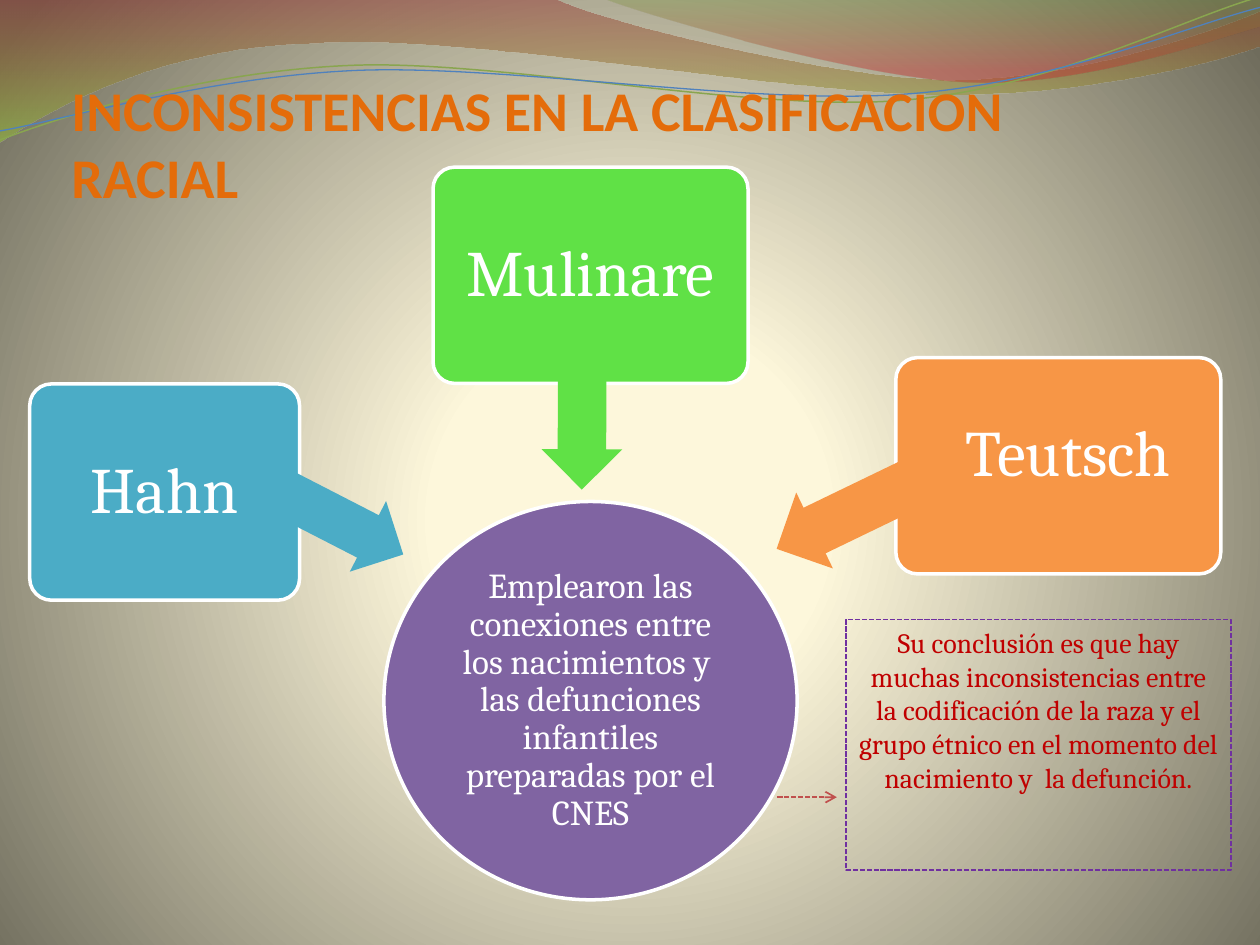
"""Build the slide on inconsistencies in racial classification."""
from dataclasses import dataclass

from lxml import etree
from pptx import Presentation
from pptx.dml.color import RGBColor
from pptx.enum.dml import MSO_LINE
from pptx.enum.shapes import MSO_CONNECTOR, MSO_SHAPE
from pptx.enum.text import MSO_ANCHOR, PP_ALIGN
from pptx.oxml.ns import qn
from pptx.util import Cm, Pt

ROUNDED, OVAL, RECT = MSO_SHAPE.ROUNDED_RECTANGLE, MSO_SHAPE.OVAL, MSO_SHAPE.RECTANGLE
LEFT_ARROW, STRAIGHT, DASH = MSO_SHAPE.LEFT_ARROW, MSO_CONNECTOR.STRAIGHT, MSO_LINE.SQUARE_DOT
TOP, MIDDLE = MSO_ANCHOR.TOP, MSO_ANCHOR.MIDDLE
LEFT, CENTER = PP_ALIGN.LEFT, PP_ALIGN.CENTER


@dataclass(frozen=True)
class Theme:
    heading_font: str = "Calibri"
    body_font: str = "Cambria"
    heading: str = "E46C0A"
    white: str = "FFFFFF"
    orange: str = "F79646"
    green: str = "60E146"
    blue: str = "4BACC6"
    purple: str = "8064A2"
    conclusion: str = "C00000"
    conclusion_border: str = "7030A0"
    pointer: str = "C0504D"
    olive_wave: str = "89A54F"
    blue_wave: str = "4F81BD"
    backdrop: tuple = ((0, "FFF9DA", 100), (25, "FDF7DB", 100), (100, "6F6C5C", 100))
    wide_wave: tuple = ((0, "973330", 45), (100, "95C238", 55))
    corner_wave: tuple = ((0, "769537", 30), (80, "BE3330", 45))
    heading_size: int = 32
    author_size: int = 37
    method_size: int = 20
    conclusion_size: int = 16


theme = Theme()


def set_gradient(gradient, stops, radial=False):
    for child in list(gradient):
        gradient.remove(child)
    stop_list = etree.SubElement(gradient, qn("a:gsLst"))
    for position, color, opacity in stops:
        stop = etree.SubElement(stop_list, qn("a:gs"), pos=str(position * 1000))
        tint = etree.SubElement(stop, qn("a:srgbClr"), val=color)
        if opacity < 100:
            etree.SubElement(tint, qn("a:alpha"), val=str(opacity * 1000))
    if radial:
        focus = etree.SubElement(gradient, qn("a:path"), path="circle")
        etree.SubElement(focus, qn("a:fillToRect"), l="10000", t="110000", r="10000", b="100000")
    else:
        etree.SubElement(gradient, qn("a:lin"), ang="5400000", scaled="0")


def write(shape, text, size, color, font=theme.body_font, bold=False,
          align=CENTER, anchor=MIDDLE, spacing=0.9, insets=None):
    frame = shape.text_frame
    frame.word_wrap = True
    frame.vertical_anchor = anchor
    if insets:
        (frame.margin_left, frame.margin_top,
         frame.margin_right, frame.margin_bottom) = map(Cm, insets)
    paragraph = frame.paragraphs[0]
    paragraph.alignment = align
    paragraph.line_spacing = spacing
    run = paragraph.add_run()
    run.text = text
    run.font.name, run.font.size, run.font.bold = font, Pt(size), bold
    run.font.color.rgb = RGBColor.from_string(color)


presentation = Presentation()
presentation.slide_width, presentation.slide_height = Cm(25.4), Cm(19.05)
slide = presentation.slides.add_slide(presentation.slide_layouts[6])
shapes = slide.shapes

slide.background.fill.gradient()
set_gradient(slide.element.find(".//" + qn("a:gradFill")), theme.backdrop, radial=True)

waves = [
    ([(0, 0), (11.18, -0.03), (12.09, 0.43, 16.87, 1.6, 19.25, 1.6),
      (21.67, 1.6, 24.33, 0.66, 25.4, 0.23), (25.43, 0.91),
      (24.97, 1.12, 22.1, 1.93, 18.95, 1.9), (15.8, 1.9, 9.7, 0.71, 6.53, 0.86),
      (3.28, 0.91, 1.17, 2.11, -0.03, 2.87)], theme.wide_wave, None, 0),
    ([(12.17, -0.03), (12.93, 0.28, 17.32, 1.57, 19.53, 1.65),
      (21.74, 1.75, 24.41, 0.81, 25.4, 0.53), (25.4, 0)], theme.corner_wave, None, 0),
    ([(0, 2.82), (1.22, 2.36, 4.01, 1.45, 7.04, 1.32),
      (10.03, 1.19, 15.06, 2.26, 18.11, 2.03),
      (21.16, 1.8, 23.83, 0.38, 25.35, -0.05)], None, theme.olive_wave, 0.85),
    ([(0, 2.64), (1.19, 2.44, 4.17, 1.55, 7.19, 1.42),
      (10.24, 1.3, 15.16, 2.13, 18.21, 1.9),
      (21.23, 1.7, 23.9, 0.53, 25.4, 0.15)], None, theme.blue_wave, 0.75),
]
for segments, stops, stroke, weight in waves:
    points = [(Cm(segment[i]), Cm(segment[i + 1]))
              for segment in segments for i in range(0, len(segment), 2)]
    builder = shapes.build_freeform(*points[0])
    builder.add_line_segments(points[1:], close=bool(stops))
    wave = builder.convert_to_shape()
    wave.shadow.inherit = False
    sides = iter(list(wave.element.iter(qn("a:lnTo"))))
    for segment in segments[1:]:
        side = next(sides)
        if len(segment) == 6:
            side.tag = qn("a:cubicBezTo")
            for _ in range(2):
                control = next(sides)
                side.append(control[0])
                control.getparent().remove(control)
    if stops:
        wave.fill.gradient()
        set_gradient(wave.element.spPr.find(qn("a:gradFill")), stops)
        wave.line.fill.background()
    else:
        wave.fill.background()
        wave.line.color.rgb = RGBColor.from_string(stroke)
        wave.line.width = Pt(weight)

heading = shapes.add_textbox(Cm(1.19), Cm(1.4), Cm(22.86), Cm(3.18))
write(heading, "INCONSISTENCIAS EN LA CLASIFICACION RACIAL", theme.heading_size, theme.heading,
      font=theme.heading_font, bold=True, align=LEFT, anchor=TOP, spacing=1)

method_text = ("Emplearon las conexiones entre los nacimientos y  las defunciones "
               "infantiles preparadas por el CNES")
even = (0.2, 0.2, 0.2, 0.2)
nodes = [
    (OVAL, (7.74, 10.11, 8.33, 8.03), theme.purple, method_text, theme.method_size,
     (0.1, 0.03, 0.1, 0.03), None, 0),
    (ROUNDED, (18.06, 7.21, 6.55, 4.36), theme.orange, "Teutsch", theme.author_size,
     (0.6, 0.2, 0.2, 0.6), (15.5, 9.53, 3.15, 1.7), 334.2),
    (ROUNDED, (8.73, 3.37, 6.35, 4.36), theme.green, "Mulinare", theme.author_size,
     even, (10.07, 7.39, 3.33, 1.63), 270.2),
    (ROUNDED, (0.6, 7.74, 5.44, 4.36), theme.blue, "Hahn", theme.author_size,
     even, (5.37, 9.71, 2.92, 1.6), 207.2),
]
for outline_kind, box, color, text, size, insets, arrow_box, angle in nodes:
    node = shapes.add_shape(outline_kind, *map(Cm, box))
    node.shadow.inherit = False
    node.fill.solid()
    node.fill.fore_color.rgb = RGBColor.from_string(color)
    node.line.color.rgb = RGBColor.from_string(theme.white)
    node.line.width = Pt(2)
    write(node, text, size, theme.white, insets=insets)
    if arrow_box:
        node.adjustments[0] = 0.1
        arrow = shapes.add_shape(LEFT_ARROW, *map(Cm, arrow_box))
        arrow.shadow.inherit = False
        arrow.adjustments[0], arrow.adjustments[1] = 0.6, 0.5
        arrow.rotation = angle
        arrow.fill.solid()
        arrow.fill.fore_color.rgb = RGBColor.from_string(color)
        arrow.line.fill.background()

conclusion = shapes.add_shape(RECT, Cm(17.06), Cm(12.49), Cm(7.75), Cm(5.05))
conclusion.shadow.inherit = False
conclusion.fill.background()
write(conclusion, "Su conclusión es que hay muchas inconsistencias entre la codificación de la raza "
      "y el grupo étnico en el momento del nacimiento y  la defunción.",
      theme.conclusion_size, theme.conclusion, anchor=TOP, spacing=1)

pointer = shapes.add_connector(STRAIGHT, Cm(15.67), Cm(16.07), Cm(16.87), Cm(16.07))
for dashed, color in ((conclusion, theme.conclusion_border), (pointer, theme.pointer)):
    dashed.line.color.rgb = RGBColor.from_string(color)
    dashed.line.width = Pt(1)
    dashed.line.dash_style = DASH
etree.SubElement(pointer.element.spPr.find(qn("a:ln")), qn("a:tailEnd"), type="arrow")
etree.SubElement(pointer.element.spPr, qn("a:effectLst"))

presentation.save("out.pptx")
